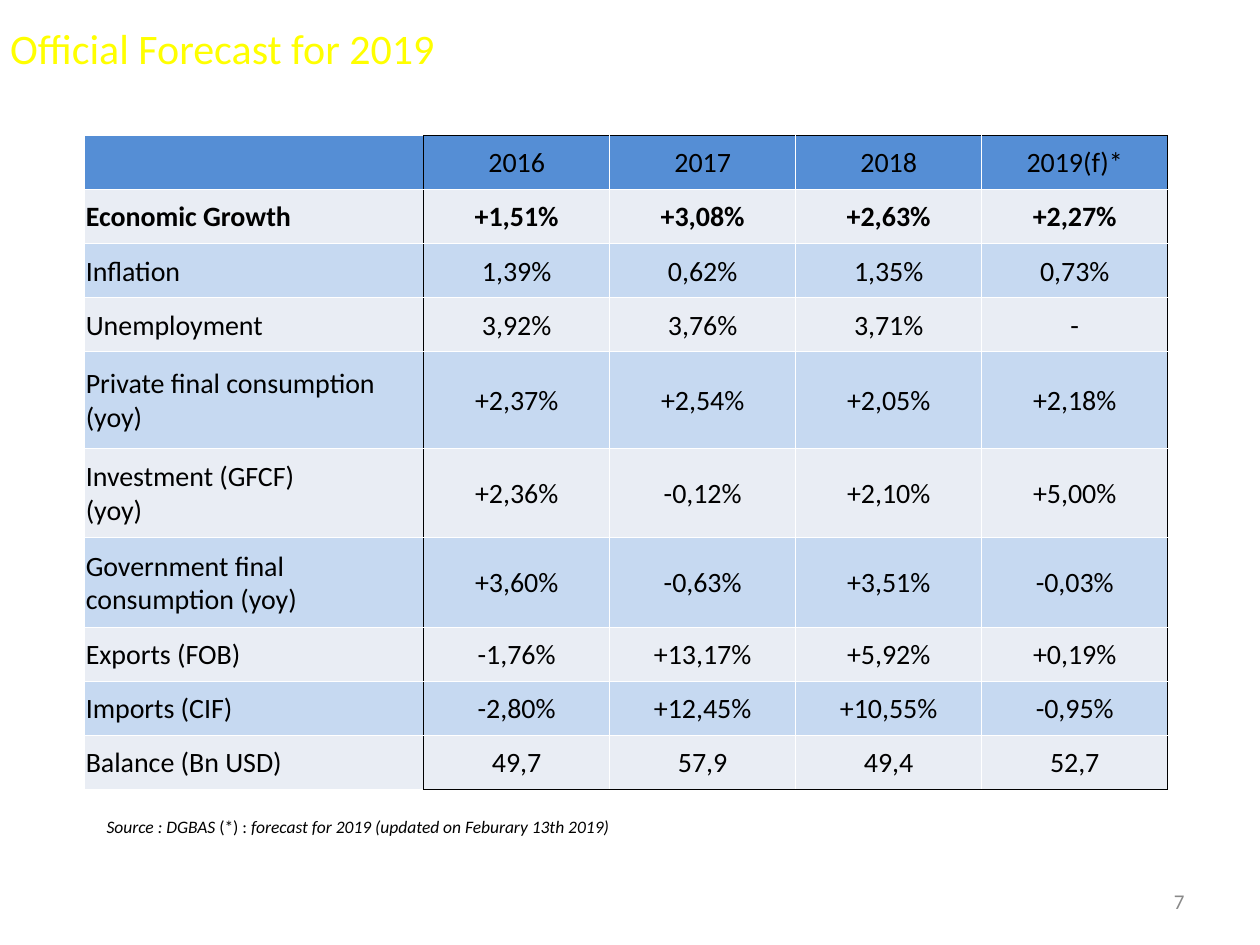
from lxml.etree import SubElement
from pptx import Presentation
from pptx.dml.color import RGBColor
from pptx.enum.text import MSO_ANCHOR as Anchor, MSO_AUTO_SIZE as AutoSize, PP_ALIGN as Align
from pptx.oxml.ns import qn
from pptx.util import Cm, Pt

FONT = "Calibri"
BLACK = RGBColor(0x00, 0x00, 0x00)
WHITE = RGBColor(0xFF, 0xFF, 0xFF)
YELLOW = RGBColor(0xFF, 0xFF, 0x00)
GREY = RGBColor(0x89, 0x89, 0x89)
HEADER_BLUE = RGBColor(0x55, 0x8E, 0xD5)
BAND_LIGHT = RGBColor(0xE9, 0xED, 0xF4)
BAND_BLUE = RGBColor(0xC6, 0xD9, 0xF1)

ROWS = [
    ("", "2016", "2017", "2018", "2019(f)*"),
    ("Economic Growth", "+1,51%", "+3,08%", "+2,63%", "+2,27%"),
    ("Inflation", "1,39%", "0,62%", "1,35%", "0,73%"),
    ("Unemployment", "3,92%", "3,76%", "3,71%", "-"),
    ("Private final consumption (yoy)", "+2,37%", "+2,54%", "+2,05%", "+2,18%"),
    ("Investment (GFCF)\v(yoy)", "+2,36%", "-0,12%", "+2,10%", "+5,00%"),
    ("Government final consumption (yoy)", "+3,60%", "-0,63%", "+3,51%", "-0,03%"),
    ("Exports (FOB)", "-1,76%", "+13,17%", "+5,92%", "+0,19%"),
    ("Imports (CIF)", "-2,80%", "+12,45%", "+10,55%", "-0,95%"),
    ("Balance (Bn USD)", "49,7", "57,9", "49,4", "52,7"),
]
ROW_HEIGHT = 1.09
TALL_ROWS = {4: 1.95, 5: 1.8, 6: 1.8}
COLUMN_WIDTHS = [6.83] + [3.75] * 4
GROWTH_ROW = 1


def format_font(font, size, color, bold=False):
    font.name = FONT
    font.size = Pt(size)
    font.bold = bold
    font.color.rgb = color


def add_title(slide, text):
    title = slide.shapes.title
    title.left, title.top, title.width, title.height = Cm(-0.05), Cm(0.33), Cm(25.4), Cm(2.29)
    frame = title.text_frame
    frame.text = text
    frame.auto_size = AutoSize.NONE
    frame.vertical_anchor = Anchor.TOP
    paragraph = frame.paragraphs[0]
    paragraph.alignment = Align.LEFT
    format_font(paragraph.font, 24, YELLOW)


def add_text(slide, box, runs, size, color, align=Align.LEFT, anchor=Anchor.TOP):
    """Add a one-paragraph text box; runs are (text, italic) pairs."""
    frame = slide.shapes.add_textbox(*(Cm(length) for length in box)).text_frame
    frame.word_wrap = True
    frame.vertical_anchor = anchor
    paragraph = frame.paragraphs[0]
    paragraph.alignment = align
    format_font(paragraph.font, size, color)
    for text, italic in runs:
        run = paragraph.add_run()
        run.text = text
        run.font.italic = italic


def set_borders(cell, row, column):
    """White grid, with a black frame around the figures."""
    last_row, last_column = len(ROWS) - 1, len(COLUMN_WIDTHS) - 1
    black_sides = {
        "a:lnL": column == 1,
        "a:lnR": column in (0, last_column),
        "a:lnT": column > 0 and row == 0,
        "a:lnB": column > 0 and row == last_row,
    }
    properties = cell._tc.get_or_add_tcPr()
    for position, (tag, is_black) in enumerate(black_sides.items()):
        line = SubElement(properties, qn(tag), w=str(Pt(0.45)))
        properties.insert(position, line)
        fill = SubElement(line, qn("a:solidFill"))
        SubElement(fill, qn("a:srgbClr"), val=str(BLACK if is_black else WHITE))


def fill_cell(cell, text, row, column):
    cell.margin_left = cell.margin_right = cell.margin_top = Cm(0.02)
    cell.margin_bottom = 0
    cell.vertical_anchor = Anchor.MIDDLE
    cell.fill.solid()
    band = BAND_LIGHT if row % 2 else BAND_BLUE
    cell.fill.fore_color.rgb = HEADER_BLUE if row == 0 else band
    set_borders(cell, row, column)
    paragraph = cell.text_frame.paragraphs[0]
    paragraph.text = text
    paragraph.alignment = Align.CENTER if column else Align.LEFT
    paragraph.line_spacing = 0.98
    format_font(paragraph.font, 16, BLACK, bold=row == GROWTH_ROW)


def add_forecast_table(slide):
    heights = [TALL_ROWS.get(row, ROW_HEIGHT) for row in range(len(ROWS))]
    table = slide.shapes.add_table(
        len(ROWS), len(COLUMN_WIDTHS), Cm(1.71), Cm(2.73),
        Cm(sum(COLUMN_WIDTHS)), Cm(sum(heights))).table
    for column, width in zip(table.columns, COLUMN_WIDTHS):
        column.width = Cm(width)
    for row, height in zip(table.rows, heights):
        row.height = Cm(height)
    for row, texts in enumerate(ROWS):
        for column, text in enumerate(texts):
            fill_cell(table.cell(row, column), text, row, column)


def main():
    presentation = Presentation()
    presentation.slide_width, presentation.slide_height = Cm(25.4), Cm(19.05)
    slide = presentation.slides.add_slide(presentation.slide_layouts[5])

    # Slide number
    add_text(slide, (18.2, 17.66, 5.93, 1.01), [("7", False)], 12, GREY,
             Align.RIGHT, Anchor.MIDDLE)

    # Figures and heading
    add_forecast_table(slide)
    add_title(slide, "Official Forecast for 2019")

    # Source note
    source = [
        ("Source : DGBAS ", True),
        ("(*) : ", False),
        ("forecast for 2019 (updated on Feburary 13th 2019)", True),
    ]
    add_text(slide, (1.9, 16.33, 12.02, 1.12), source, 10, BLACK)

    presentation.save("out.pptx")


if __name__ == "__main__":
    main()
